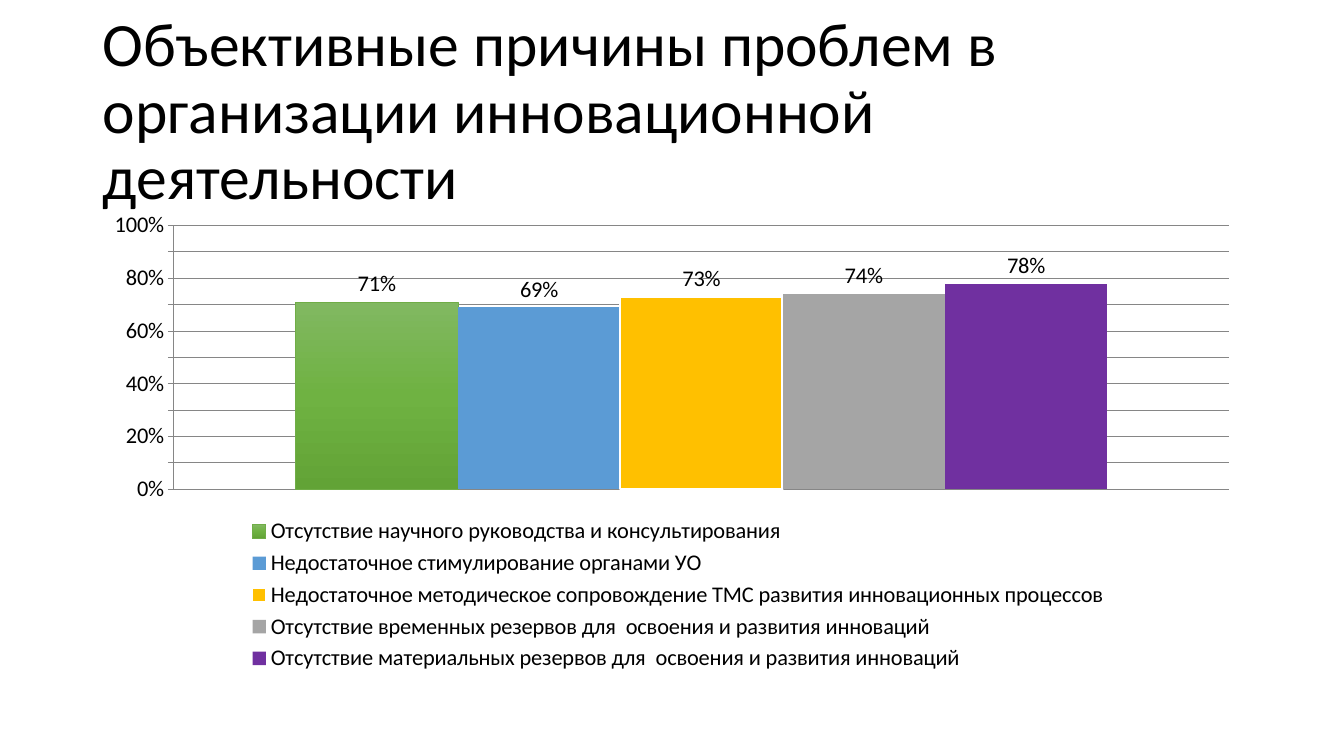
from copy import deepcopy
from dataclasses import dataclass

from lxml import etree
from pptx import Presentation
from pptx import util as u
from pptx.chart.data import CategoryChartData
from pptx.dml.color import RGBColor
from pptx.enum import chart as ch, text
from pptx.oxml.ns import qn

TITLE = "Объективные причины проблем в организации инновационной деятельности"
CAUSES = [
    ("Отсутствие научного руководства и консультирования", 0.71),
    ("Недостаточное стимулирование органами УО", 0.69),
    ("Недостаточное методическое сопровождение ТМС развития инновационных процессов", 0.73),
    ("Отсутствие временных резервов для  освоения и развития инноваций", 0.74),
    ("Отсутствие материальных резервов для  освоения и развития инноваций", 0.78),
]


@dataclass(frozen=True)
class Theme:
    font: str = "Calibri"
    title_size: int = 44
    chart_size: int = 16
    ink: str = "000000"
    grid: str = "868686"
    white: str = "FFFFFF"
    green_line: str = "70AD47"
    green: tuple = ("81B861", "6FB242", "62A336")
    bars: tuple = ("70AD47", "5B9BD5", "FFC000", "A5A5A5", "7030A0")


T = Theme()
WIDTH, HEIGHT = 13.33, 7.5
LEFT, SPAN = 0.92, 11.5
TITLE_BOX = (LEFT, 0.4, SPAN, 1.45)
CHART_BOX = (LEFT, 2, SPAN, 4.76)
PLOT_SHARE = (0.07, 0.05, 0.91, 0.55)
LEGEND_SHARE = (0.12, 0.65, 0.77, 0.34)


def rgb(value):
    return RGBColor.from_string(value)


def style(font, size):
    font.name, font.size = T.font, u.Pt(size)
    font.color.rgb = rgb(T.ink)


def outline(line, color, width):
    line.color.rgb = rgb(color)
    line.width = u.Pt(width)


def manual_layout(parent, index, shares, inner=False):
    for old in parent.findall(qn("c:layout")):
        parent.remove(old)
    layout = etree.Element(qn("c:layout"))
    manual = etree.SubElement(layout, qn("c:manualLayout"))
    fields = [("layoutTarget", "inner")] if inner else []
    fields += [("xMode", "edge"), ("yMode", "edge")]
    fields += zip("xywh", shares)
    for name, value in fields:
        etree.SubElement(manual, qn("c:" + name)).set("val", str(value))
    parent.insert(index, layout)


def green_gradient(fill):
    fill.gradient()
    fill.gradient_angle = 270
    first, last = fill.gradient_stops
    first.position, last.position = 0, 1
    first.color.rgb, last.color.rgb = rgb(T.green[0]), rgb(T.green[2])
    stop = first._gs
    middle = deepcopy(stop)
    middle.set("pos", "50000")
    middle[0].set("val", T.green[1])
    stop.addnext(middle)


def add_title(s):
    tf = s.shapes.add_textbox(*map(u.Inches, TITLE_BOX)).text_frame
    tf.word_wrap = True
    tf.vertical_anchor = text.MSO_ANCHOR.MIDDLE
    p = tf.paragraphs[0]
    p.text = TITLE
    p.line_spacing = 0.9
    style(p.font, T.title_size)


def add_causes_chart(s):
    data = CategoryChartData(number_format="0%")
    data.categories = ["1"]
    for name, share in CAUSES:
        data.add_series(name, [share])
    chart = s.shapes.add_chart(
        ch.XL_CHART_TYPE.COLUMN_CLUSTERED, *map(u.Inches, CHART_BOX), data
    ).chart
    style(chart.font, T.chart_size)
    chart.has_title = False
    chart.category_axis.visible = False

    axis = chart.value_axis
    axis.minimum_scale, axis.maximum_scale, axis.major_unit = 0, 1, 0.1
    axis.major_tick_mark = ch.XL_TICK_MARK.OUTSIDE
    axis.tick_labels.number_format = "0%"
    axis.tick_labels.number_format_is_linked = False
    for line in (axis.format.line, axis.major_gridlines.format.line):
        outline(line, T.grid, 0.75)

    plot = chart.plots[0]
    plot.gap_width, plot.overlap, plot.vary_by_categories = 150, 0, False
    for series, color in zip(plot.series, T.bars):
        series.format.fill.solid()
        series.format.fill.fore_color.rgb = rgb(color)
        labels = series.data_labels
        labels.show_value = True
        labels.number_format = "0%"
        labels.number_format_is_linked = False
        labels.position = ch.XL_LABEL_POSITION.OUTSIDE_END
    green_gradient(plot.series[0].format.fill)
    outline(plot.series[0].format.line, T.green_line, 0.5)
    outline(plot.series[2].format.line, T.white, 1.5)

    chart.has_legend = True
    chart.legend.position = ch.XL_LEGEND_POSITION.BOTTOM
    chart.legend.include_in_layout = False
    style(chart.legend.font, T.chart_size)
    manual_layout(chart._chartSpace.chart.plotArea, 0, PLOT_SHARE, inner=True)
    manual_layout(chart.legend._element, 1, LEGEND_SHARE)


def main():
    prs = Presentation()
    prs.slide_width, prs.slide_height = u.Inches(WIDTH), u.Inches(HEIGHT)
    s = prs.slides.add_slide(prs.slide_layouts[6])
    add_title(s)
    add_causes_chart(s)
    prs.save("out.pptx")


if __name__ == "__main__":
    main()
